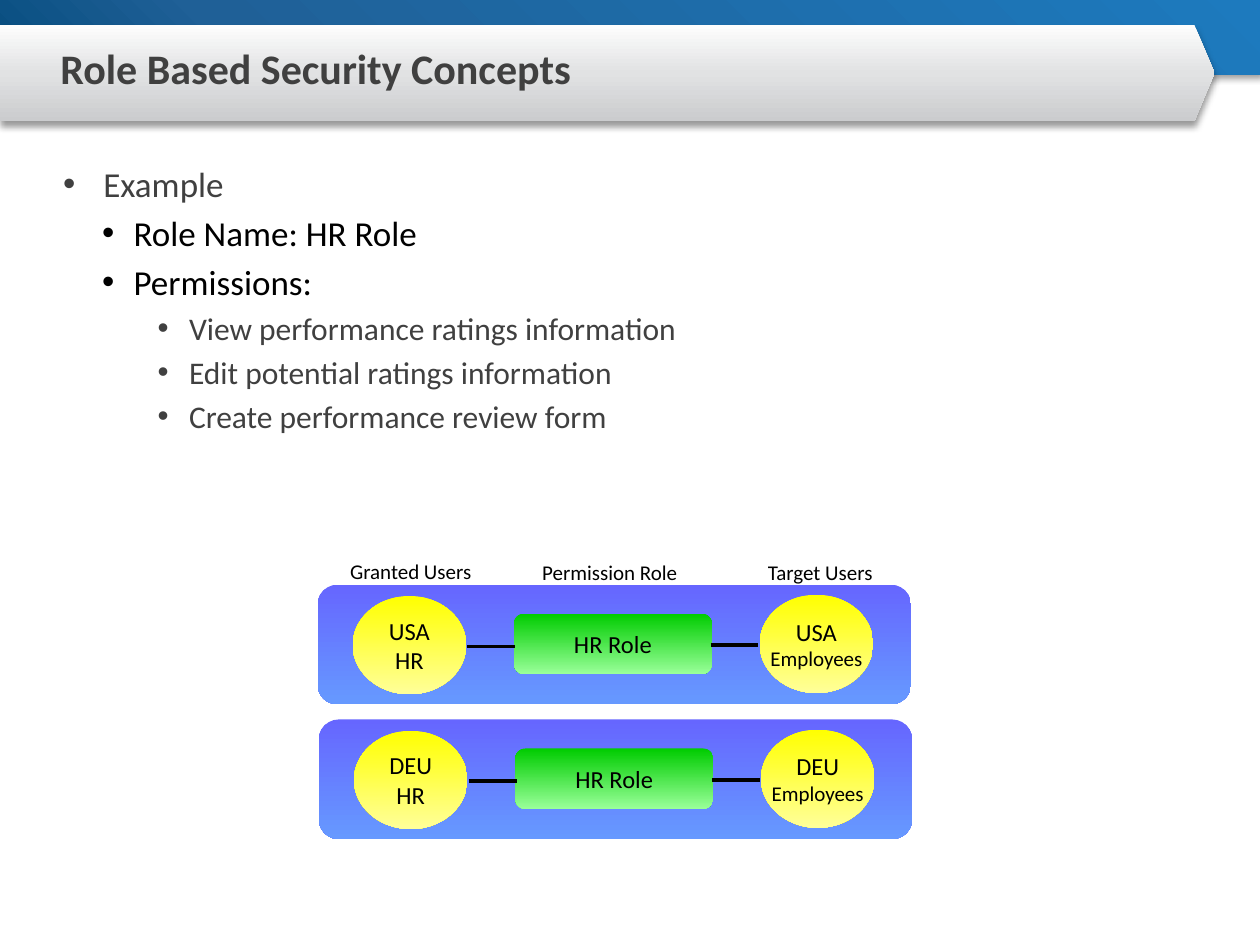
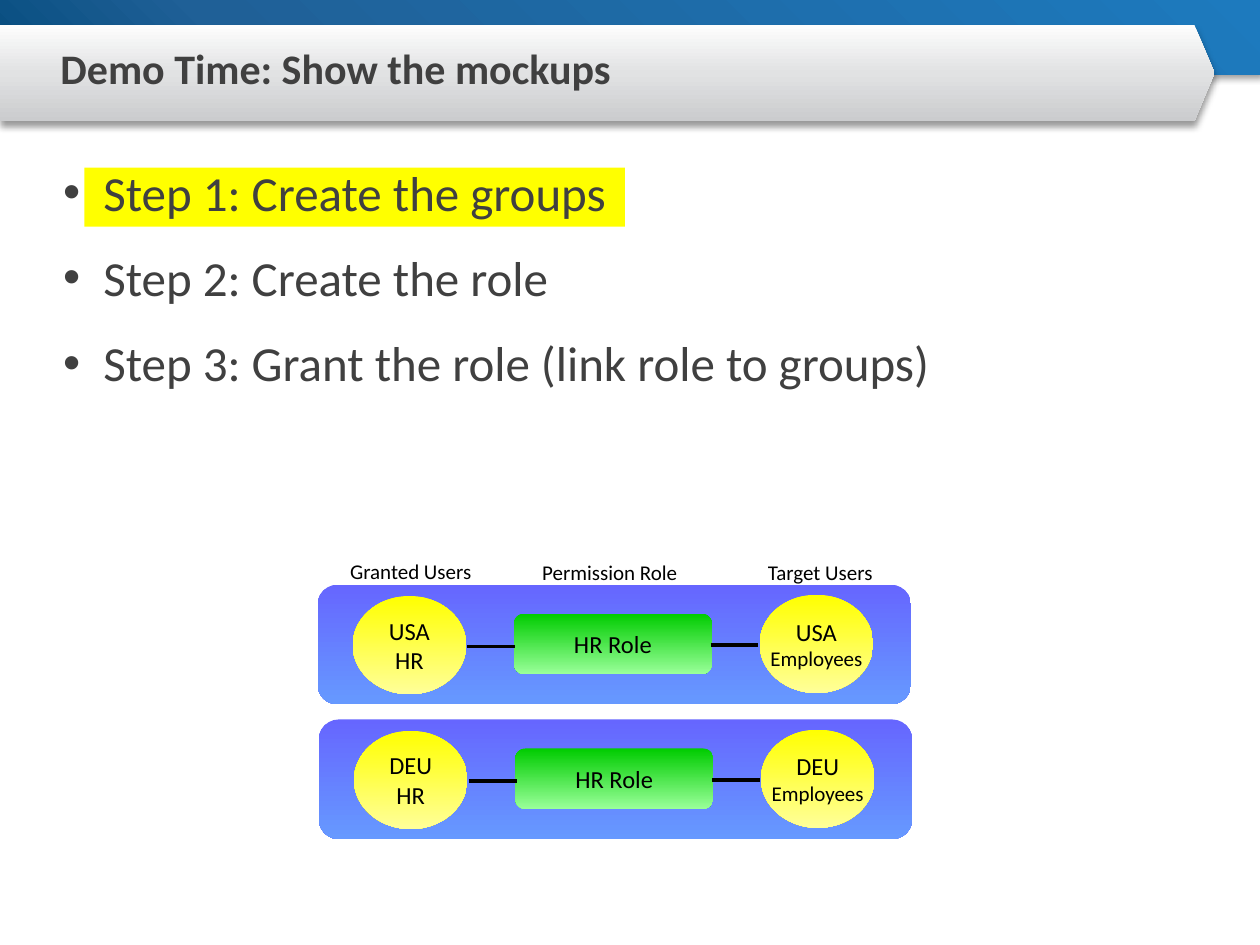
from dataclasses import dataclass
from typing import Any, Optional

from pptx import Presentation
from pptx import oxml as ox
from pptx import util as u
from pptx.dml.color import RGBColor
from pptx.enum import shapes as es
from pptx.enum import text as et
from pptx.oxml import ns

HEX = {"black": "000000", "gray": "404040", "mark": "FFFF00"}
GRADS = {
    "sky": [(0, "1D7ABE"), (80, "1F6097"), (100, "064C7D")],
    "silver": [(0, "FDFDFD"), (50, "E1E2E3"), (100, "CBCCCE")],
    "panel": [(0, "6666FF"), (100, "6699FF")],
    "users": [(0, "FFFF00"), (100, "FFFF99")],
    "role": [(0, "00CC00"), (100, "99FF99")],
}
DOWN = '<a:lin ang="5400000" scaled="0"/>'
CORNER = '<a:path path="circle"><a:fillToRect l="100000" b="100000"/></a:path>'
NS = ns.nsdecls("a")
KIND = es.MSO_SHAPE
CENTER = {"alignment": et.PP_ALIGN.CENTER}
MIDDLE = {"vertical_anchor": et.MSO_ANCHOR.MIDDLE, "word_wrap": False}
INDENTS = [(0.32, -0.32), (0.56, -0.25), (1, -0.25)]  # left, first line


@dataclass
class Box:
    x: float
    y: float
    w: float
    h: float

    def move(self, dx: float, dy: float) -> "Box":
        return Box(self.x + dx, self.y + dy, self.w, self.h)

    def emu(self) -> list:
        return [u.Inches(v) for v in (self.x, self.y, self.w, self.h)]


@dataclass
class Line:
    text: str
    size: float
    color: str = "black"
    level: int = 0
    gap: float = 0


@dataclass
class Node:
    kind: Any
    box: Box
    grad: str
    lines: tuple = ()


@dataclass
class Page:
    title: str
    items: list
    mark: Optional[Box] = None


BODY = Box(0.4, 1.24, 9.11, 2.3)
HEAD = Box(0.38, 0.18, 6.34, 0.78)
LABELS = [
    ("Granted Users", Box(2.59, 4.38, 1.34, 0.3)),
    ("Permission Role", Box(4.04, 4.39, 1.6, 0.3)),
    ("Target Users", Box(5.84, 4.39, 1.34, 0.3)),
]
LINKS = [(3.71, 5.13), (5.64, 5.12)]
LINK = 0.38
ROWS = [("USA", 0, 0), ("DEU", 0.01, 1.07)]

PAGES = [
    Page("Role Based Security Concepts", [
        Line("Example", 20, "gray"),
        Line("Role Name: HR Role", 20, "black", 1, 4),
        Line("Permissions:", 20, "black", 1, 4),
        Line("View performance ratings information", 18, "gray", 2, 3.6),
        Line("Edit potential ratings information", 18, "gray", 2, 3.6),
        Line("Create performance review form", 18, "gray", 2, 3.6),
    ]),
    Page("Demo Time: Show the mockups", [
        Line("Step 1: Create the groups", 28, "gray"),
        Line("Step 2: Create the role", 28, "gray", 0, 15),
        Line("Step 3: Grant the role (link role to groups)", 28, "gray", 0, 15),
    ], Box(0.67, 1.33, 4.29, 0.47)),
]


def apply(obj: Any, form: dict) -> None:
    for key, val in form.items():
        setattr(obj, key, val)


def place(shape: Any, box: Box) -> None:
    apply(shape, dict(zip(("left", "top", "width", "height"), box.emu())))


def write(frame: Any, lines: Any, form: dict, bold: bool = False) -> list:
    """Fill a text frame, one paragraph a line, and return the paragraphs."""
    for i, line in enumerate(lines):
        para = frame.add_paragraph() if i else frame.paragraphs[0]
        apply(para, form)
        run = para.add_run()
        run.text = line.text
        apply(run.font, {"name": "Calibri", "size": u.Pt(line.size), "bold": bold})
        run.font.color.rgb = RGBColor.from_string(HEX[line.color])
    return list(frame.paragraphs)


def draw(shapes: Any, kind: Any, box: Box) -> Any:
    shape = shapes.add_shape(kind, *box.emu())
    shape.shadow.inherit = False
    shape.line.fill.background()
    return shape


def shade(shape: Any, name: str, way: str = DOWN) -> None:
    """Fill a shape with a named gradient."""
    stops = "".join(
        f'<a:gs pos="{pos * 1000}"><a:srgbClr val="{color}"/></a:gs>'
        for pos, color in GRADS[name])
    shape.fill.gradient()
    old = shape.element.spPr.find(ns.qn("a:gradFill"))
    new = ox.parse_xml(f'<a:gradFill {NS} rotWithShape="1">'
                       f"<a:gsLst>{stops}</a:gsLst>{way}</a:gradFill>")
    old.getparent().replace(old, new)


def cast(shape: Any, angle: int) -> None:
    """Give a band its soft drop shadow."""
    shape.element.spPr.find(ns.qn("a:effectLst")).append(ox.parse_xml(
        f'<a:outerShdw {NS} blurRad="{u.Pt(4)}" dist="{u.Pt(3)}" '
        f'dir="{angle * 60000}" algn="tl" rotWithShape="0">'
        '<a:srgbClr val="000000"><a:alpha val="40000"/></a:srgbClr></a:outerShdw>'))


def bands(layout: Any, slide: Any) -> None:
    """Draw the header bands and hand them to the layout."""
    top = draw(slide.shapes, KIND.RECTANGLE, Box(0, 0, 10, 0.59))
    shade(top, "sky", CORNER)
    cast(top, 45)
    plate = draw(slide.shapes, KIND.PENTAGON, Box(0, 0.2, 9.64, 0.76))
    plate.adjustments[0] = 0.21
    shade(plate, "silver")
    cast(plate, 90)
    for i, band in enumerate((top, plate)):
        layout.shapes.element.insert(2 + i, band.element)


def join(shapes: Any, x: float, y: float) -> None:
    ends = [u.Inches(v) for v in (x, y, x + LINK, y)]
    link = shapes.add_connector(es.MSO_CONNECTOR.STRAIGHT, *ends)
    link.line.width = u.Pt(2)
    link.line.color.rgb = RGBColor.from_string(HEX["black"])
    link.element.spPr.append(ox.parse_xml(f"<a:effectLst {NS}/>"))


def chain(shapes: Any, land: str, dx: float, dy: float) -> None:
    """Draw one row: granted users, role and target users on a panel."""
    nodes = [
        Node(KIND.ROUNDED_RECTANGLE, Box(2.52, 4.64, 4.71, 0.95), "panel"),
        Node(KIND.OVAL, Box(6.03, 4.72, 0.9, 0.78), "users",
             (Line(land, 14), Line("Employees", 12))),
        Node(KIND.OVAL, Box(2.8, 4.73, 0.9, 0.78), "users",
             (Line(land, 14), Line("HR", 14))),
        Node(KIND.ROUNDED_RECTANGLE, Box(4.08, 4.87, 1.57, 0.48), "role",
             (Line("HR Role", 14),)),
    ]
    for node in nodes:
        shape = draw(shapes, node.kind, node.box.move(dx, dy))
        shade(shape, node.grad)
        apply(shape.text_frame, MIDDLE)
        write(shape.text_frame, node.lines, CENTER)
    for x, y in LINKS:
        join(shapes, x + dx, y + dy)


def chart(slide: Any) -> None:
    """Draw the grouped diagram of users and roles."""
    group = slide.shapes.add_group_shape().shapes
    for land, dx, dy in ROWS:
        chain(group, land, dx, dy)
    for text, box in LABELS:
        frame = group.add_textbox(*box.emu()).text_frame
        frame.word_wrap = True
        write(frame, [Line(text, 12)], CENTER)


def bullets(body: Any, items: list) -> None:
    place(body, BODY)
    frame = body.text_frame
    frame.auto_size = et.MSO_AUTO_SIZE.NONE
    paras = write(frame, items, {"alignment": et.PP_ALIGN.LEFT})
    for para, item in zip(paras, items):
        left, first = INDENTS[item.level]
        props = para._p.get_or_add_pPr()
        props.append(ox.parse_xml(f'<a:buFont {NS} typeface="Arial"/>'))
        props.append(ox.parse_xml(f'<a:buChar {NS} char="•"/>'))
        apply(para, {"level": item.level, "space_before": u.Pt(item.gap)})
        props.set("marL", str(u.Inches(left)))
        props.set("indent", str(u.Inches(first)))


def build(slide: Any, page: Page) -> None:
    title, body = slide.placeholders
    place(title, HEAD)
    apply(title.text_frame, {"vertical_anchor": et.MSO_ANCHOR.MIDDLE,
                             "auto_size": et.MSO_AUTO_SIZE.NONE})
    write(title.text_frame, [Line(page.title, 24, "gray")],
          {"alignment": et.PP_ALIGN.LEFT, "line_spacing": 0.85}, True)
    bullets(body, page.items)
    if page.mark:
        mark = draw(slide.shapes, KIND.RECTANGLE, page.mark)
        mark.fill.solid()
        mark.fill.fore_color.rgb = RGBColor.from_string(HEX["mark"])
        slide.shapes.element.insert(2, mark.element)
    chart(slide)


def main() -> None:
    deck = Presentation()
    apply(deck, {"slide_width": u.Inches(10), "slide_height": u.Inches(7.5)})
    layout = deck.slide_layouts[1]
    slides = [deck.slides.add_slide(layout) for _ in PAGES]
    bands(layout, slides[0])
    for slide, page in zip(slides, PAGES):
        build(slide, page)
    deck.save("out.pptx")


if __name__ == "__main__":
    main()
